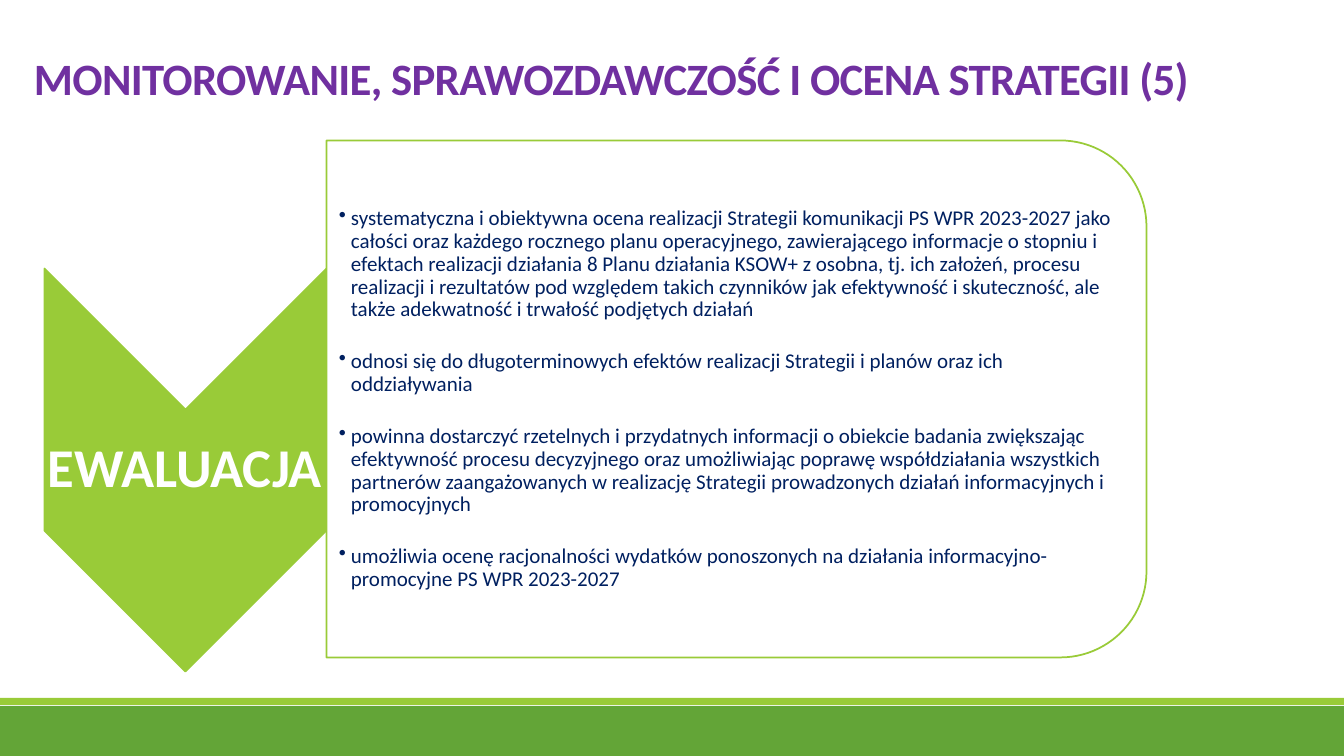
from lxml.etree import SubElement
from pptx import Presentation
from pptx.dml.color import RGBColor
from pptx.enum.shapes import MSO_SHAPE
from pptx.enum.text import MSO_ANCHOR, PP_ALIGN
from pptx.oxml.ns import qn
from pptx.util import Pt

PX = 914400 / 100.8  # EMU in one px
GREEN, DARK_GREEN, WHITE = "99CB38", "63A537", "FFFFFF"
PURPLE, NAVY = "7030A0", "002060"

TITLE = "MONITOROWANIE, SPRAWOZDAWCZOŚĆ I OCENA STRATEGII (5)"
STAGE = "EWALUACJA"
POINTS = [
    "systematyczna i obiektywna ocena realizacji Strategii komunikacji PS WPR 2023-2027 "
    "jako całości oraz każdego rocznego planu operacyjnego, zawierającego informacje "
    "o stopniu i efektach realizacji działania 8 Planu działania KSOW+ z osobna, "
    "tj. ich założeń, procesu realizacji i rezultatów pod względem takich czynników "
    "jak efektywność i skuteczność, ale także adekwatność i trwałość podjętych działań",
    "odnosi się do długoterminowych efektów realizacji Strategii i planów "
    "oraz ich oddziaływania",
    "powinna dostarczyć rzetelnych i przydatnych informacji o obiekcie badania "
    "zwiększając efektywność procesu decyzyjnego oraz umożliwiając poprawę współdziałania "
    "wszystkich partnerów zaangażowanych w realizację Strategii prowadzonych działań "
    "informacyjnych i promocyjnych",
    "umożliwia ocenę racjonalności wydatków ponoszonych na działania "
    "informacyjno-promocyjne PS WPR 2023-2027",
]


def px(length):
    return round(length * PX)


def rgb(hex_color):
    return RGBColor.from_string(hex_color)


def set_all(target, values):
    for name, value in values.items():
        setattr(target, name, value)


def add_panel(slide, kind, box, fill, line=None, rotation=0):
    panel = slide.shapes.add_shape(kind, *map(px, box))
    panel.rotation = rotation
    panel.shadow.inherit = False
    panel.fill.solid()
    panel.fill.fore_color.rgb = rgb(fill)
    if line:
        panel.line.color.rgb = rgb(line)
        panel.line.width = Pt(1.25)
    else:
        panel.line.fill.background()
    return panel


def add_text(slide, box, texts, color, font, paragraph, frame):
    text_frame = slide.shapes.add_textbox(*map(px, box)).text_frame
    set_all(text_frame, {"word_wrap": True, **frame})
    text_frame.text = "\n".join(texts)
    for line in text_frame.paragraphs:
        set_all(line, paragraph)
        set_all(line.runs[0].font, {"name": "Calibri", **font})
        line.runs[0].font.color.rgb = rgb(color)
    return text_frame.paragraphs


def add_bullet(paragraph, indent):
    properties = paragraph._p.get_or_add_pPr()
    properties.set("marL", str(px(indent)))
    properties.set("indent", str(-px(indent)))
    SubElement(properties, qn("a:buChar"), char="•")


def margins(left, others):
    return {"margin_left": px(left), "margin_top": px(others),
            "margin_right": px(others), "margin_bottom": px(others)}


def main():
    deck = Presentation()
    set_all(deck, {"slide_width": px(1344), "slide_height": px(756)})
    slide = deck.slides.add_slide(deck.slide_layouts[6])

    # Footer bands
    add_panel(slide, MSO_SHAPE.RECTANGLE, (0, 706, 1344, 50), DARK_GREEN)
    add_panel(slide, MSO_SHAPE.RECTANGLE, (0, 698, 1344, 7), GREEN)

    # Title
    heading, = add_text(slide, (24, 45, 1279, 65), [TITLE], PURPLE,
                        {"size": Pt(32), "bold": True}, {"line_spacing": 0.85},
                        {"vertical_anchor": MSO_ANCHOR.BOTTOM})
    heading.runs[0]._r.get_or_add_rPr().set("spc", "-50")

    # Stage arrow
    add_panel(slide, MSO_SHAPE.CHEVRON, (-16, 329, 403, 282), GREEN, GREEN, 90)
    add_text(slide, (44, 409, 282, 121), [STAGE], WHITE,
             {"size": Pt(39), "bold": True},
             {"line_spacing": 0.9, "alignment": PP_ALIGN.CENTER},
             {"vertical_anchor": MSO_ANCHOR.MIDDLE, **margins(3, 3)})

    # Description panel
    add_panel(slide, MSO_SHAPE.ROUND_2_SAME_RECTANGLE, (478, -11, 517, 820),
              WHITE, GREEN, 90)
    points = add_text(slide, (327, 166, 795, 467), POINTS, NAVY,
                      {"size": Pt(15)}, {"line_spacing": 0.9, "space_after": Pt(21)},
                      {"vertical_anchor": MSO_ANCHOR.MIDDLE, **margins(12, 1)})
    points[-1].space_after = Pt(2)
    for point in points:
        add_bullet(point, 12)

    deck.save("out.pptx")


if __name__ == "__main__":
    main()
